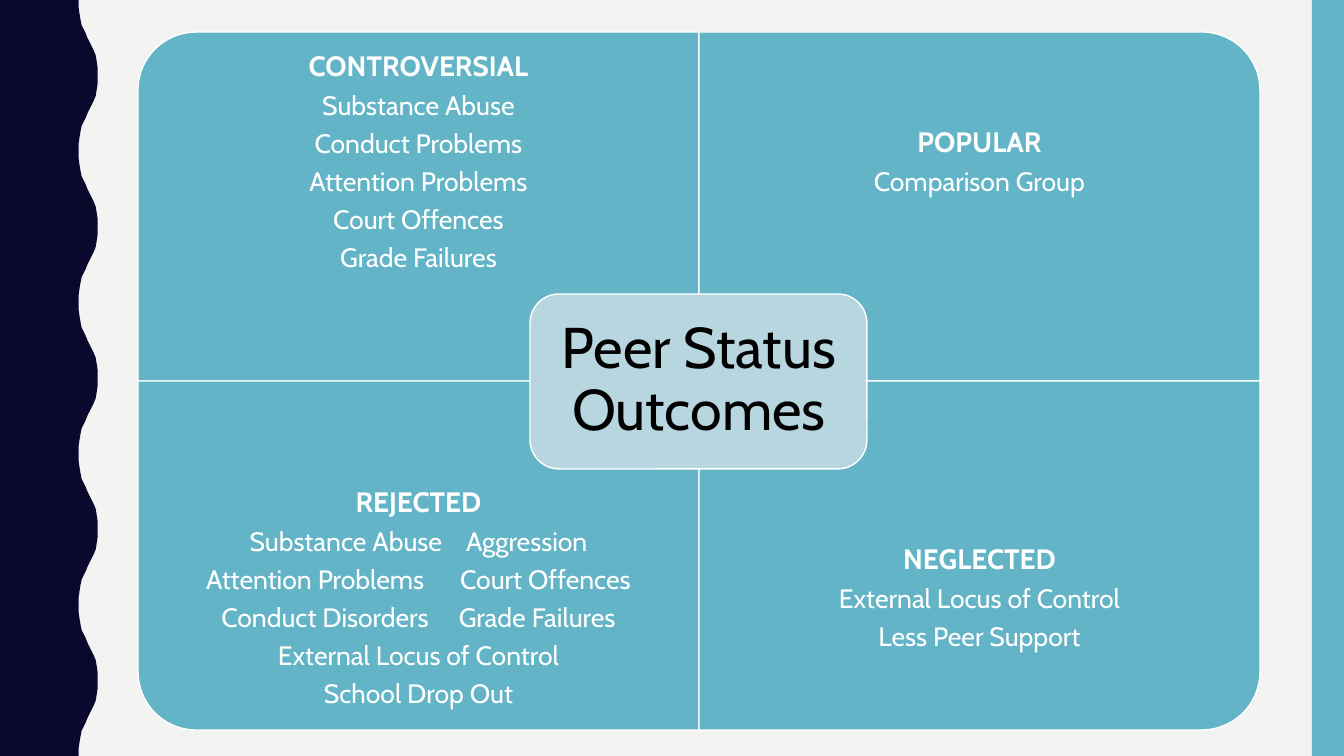
import lxml.etree
import pptx
import pptx.dml.color
import pptx.enum.shapes
import pptx.enum.text
import pptx.oxml.ns
import pptx.util

PX = 914400 / 100.8
HUNDREDTH_INCH = 9144
POINTS_PER_PX = 72 / 100.8

NAVY = pptx.dml.color.RGBColor(0x0B, 0x08, 0x2E)
TEAL = pptx.dml.color.RGBColor(0x62, 0xB4, 0xC6)
PALE_TEAL = pptx.dml.color.RGBColor(0xB7, 0xD6, 0xDF)
PAPER = pptx.dml.color.RGBColor(0xF3, 0xF3, 0xF2)
WHITE = pptx.dml.color.RGBColor(0xFF, 0xFF, 0xFF)
BLACK = pptx.dml.color.RGBColor(0, 0, 0)

SLIDE_WIDTH, SLIDE_HEIGHT = 1344, 756
CENTRE_X, CENTRE_Y = 699, 381
PANEL_WIDTH, PANEL_HEIGHT, TEXT_HEIGHT = 561, 349, 262
SPACE_WIDTH = 6

# Half a wave of the left edge, as (x, y) in hundredths of an inch
HALF_WAVE = [(78, 0), (78, 7), (79, 14), (80, 20), (81, 25), (83, 29), (85, 33),
             (87, 38), (89, 42), (91, 46), (93, 50), (95, 55), (96, 61), (97, 68), (97, 75)]
WAVE_LENGTH, WAVE_COUNT = 150, 5

# Column, row, rotation, heading, lines; a paired line is (left, gap, right, shift)
QUADRANTS = [
    (0, 0, 270, "CONTROVERSIAL",
     ["Substance Abuse", "Conduct Problems", "Attention Problems", "Court Offences",
      "Grade Failures"]),
    (1, 0, 0, "POPULAR", ["Comparison Group"]),
    (0, 1, 180, "REJECTED",
     [("Substance Abuse", 24, "Aggression", 36),
      ("Attention Problems", 36, "Court Offences", 0),
      ("Conduct Disorders", 30, "Grade Failures", 0),
      "External Locus of Control", "School Drop Out"]),
    (1, 1, 90, "NEGLECTED", ["External Locus of Control", "Less Peer Support"]),
]


def px(length):
    return pptx.util.Emu(round(length * PX))


class SlideBuilder:
    font_name = "Cabin"
    line_spacing = 0.9
    space_after = 0.35

    def __init__(self, slide):
        self.slide = slide

    def paint(self, shape, fill, line=None):
        shape.shadow.inherit = False
        shape.fill.solid()
        shape.fill.fore_color.rgb = fill
        if line is None:
            shape.line.fill.background()
        else:
            shape.line.color.rgb = line
            shape.line.width = pptx.util.Pt(1)

    def box(self, kind, left, top, width, height, fill, line=None, rotation=0):
        """Add a preset shape; the frame given is the one seen after rotation."""
        if rotation % 180:
            left, top = left + (width - height) / 2, top + (height - width) / 2
            width, height = height, width
        shape = self.slide.shapes.add_shape(kind, px(left), px(top), px(width), px(height))
        shape.rotation = rotation
        self.paint(shape, fill, line)

    def wave(self, fill):
        points = []
        for index in range(WAVE_COUNT):
            start = index * WAVE_LENGTH
            points += [(x, start + y) for x, y in HALF_WAVE]
            points += [(x, start + WAVE_LENGTH - y) for x, y in reversed(HALF_WAVE[1:-1])]
        bottom = WAVE_COUNT * WAVE_LENGTH
        points += [(HALF_WAVE[0][0], bottom), (0, bottom)]
        builder = self.slide.shapes.build_freeform(0, 0, scale=HUNDREDTH_INCH)
        builder.add_line_segments(points, close=True)
        self.paint(builder.convert_to_shape(), fill)

    def place(self, placeholder, left, top, width, height, inset):
        """Bring a placeholder to the front, set its frame and return its text frame."""
        placeholder.element.getparent().append(placeholder.element)
        placeholder.left, placeholder.top = px(left), px(top)
        placeholder.width, placeholder.height = px(width), px(height)
        frame = placeholder.text_frame
        frame.word_wrap = True
        frame.auto_size = pptx.enum.text.MSO_AUTO_SIZE.NONE
        frame.vertical_anchor = pptx.enum.text.MSO_ANCHOR.MIDDLE
        frame.margin_left = frame.margin_right = px(inset)
        frame.margin_top = frame.margin_bottom = px(inset)
        return frame

    def format_paragraph(self, paragraph, size, shift=0):
        paragraph.alignment = pptx.enum.text.PP_ALIGN.CENTER
        paragraph.line_spacing = self.line_spacing
        paragraph.space_before = pptx.util.Pt(0)
        paragraph.space_after = pptx.util.Pt(round(size * self.space_after, 2))
        properties = paragraph._p.get_or_add_pPr()
        properties.set("marL", "0")
        properties.set("indent", str(-px(shift)))
        lxml.etree.SubElement(properties, pptx.oxml.ns.qn("a:buNone"))

    def run(self, paragraph, text, size, color, bold=False):
        run = paragraph.add_run()
        run.text = text
        run.font.name = self.font_name
        run.font.size = pptx.util.Pt(size)
        run.font.color.rgb = color
        run.font.bold = bold
        return run

    def gap(self, paragraph, width, size):
        """Add one space, widened by letter spacing."""
        run = self.run(paragraph, " ", size, WHITE)
        spacing = round((width - SPACE_WIDTH) * POINTS_PER_PX * 100)
        run._r.get_or_add_rPr().set("spc", str(spacing))

    def outcome_list(self, placeholder, left, top, heading, lines):
        frame = self.place(placeholder, left, top, PANEL_WIDTH, TEXT_HEIGHT, 16)
        paragraph = frame.paragraphs[0]
        self.format_paragraph(paragraph, 20)
        self.run(paragraph, heading, 20, WHITE, bold=True)
        for line in lines:
            paragraph = frame.add_paragraph()
            if isinstance(line, str):
                self.format_paragraph(paragraph, 19)
                self.run(paragraph, line, 19, WHITE)
            else:
                first, gap, second, shift = line
                self.format_paragraph(paragraph, 19, shift)
                self.run(paragraph, first, 19, WHITE)
                self.gap(paragraph, gap, 19)
                self.run(paragraph, second, 19, WHITE)

    def title(self, text, left, top, width, height):
        frame = self.place(self.slide.shapes.title, left, top, width, height, 17)
        self.format_paragraph(frame.paragraphs[0], 41)
        self.run(frame.paragraphs[0], text, 41, BLACK)


def main():
    presentation = pptx.Presentation()
    presentation.slide_width, presentation.slide_height = px(SLIDE_WIDTH), px(SLIDE_HEIGHT)
    # The comparison layout offers a title and four bodies
    slide = presentation.slides.add_slide(presentation.slide_layouts[4])
    builder = SlideBuilder(slide)
    shapes = pptx.enum.shapes.MSO_SHAPE

    # Background and side bands
    slide.background.fill.solid()
    slide.background.fill.fore_color.rgb = PAPER
    builder.wave(NAVY)
    builder.box(shapes.RECTANGLE, 1312, 0, 32, SLIDE_HEIGHT, TEAL)

    # Quadrants, with the text kept clear of the middle
    for number, (column, row, rotation, heading, lines) in enumerate(QUADRANTS, start=1):
        left = CENTRE_X + (column - 1) * PANEL_WIDTH
        top = CENTRE_Y + (row - 1) * PANEL_HEIGHT
        builder.box(shapes.ROUND_1_RECTANGLE, left, top, PANEL_WIDTH, PANEL_HEIGHT,
                    TEAL, WHITE, rotation)
        text_top = top + row * (PANEL_HEIGHT - TEXT_HEIGHT)
        builder.outcome_list(slide.placeholders[number], left, text_top, heading, lines)

    # Central title
    builder.box(shapes.ROUNDED_RECTANGLE, 530, 294, 337, 175, PALE_TEAL, WHITE)
    builder.title("Peer Status Outcomes", 539, 302, 320, 158)

    presentation.save("out.pptx")


if __name__ == "__main__":
    main()
